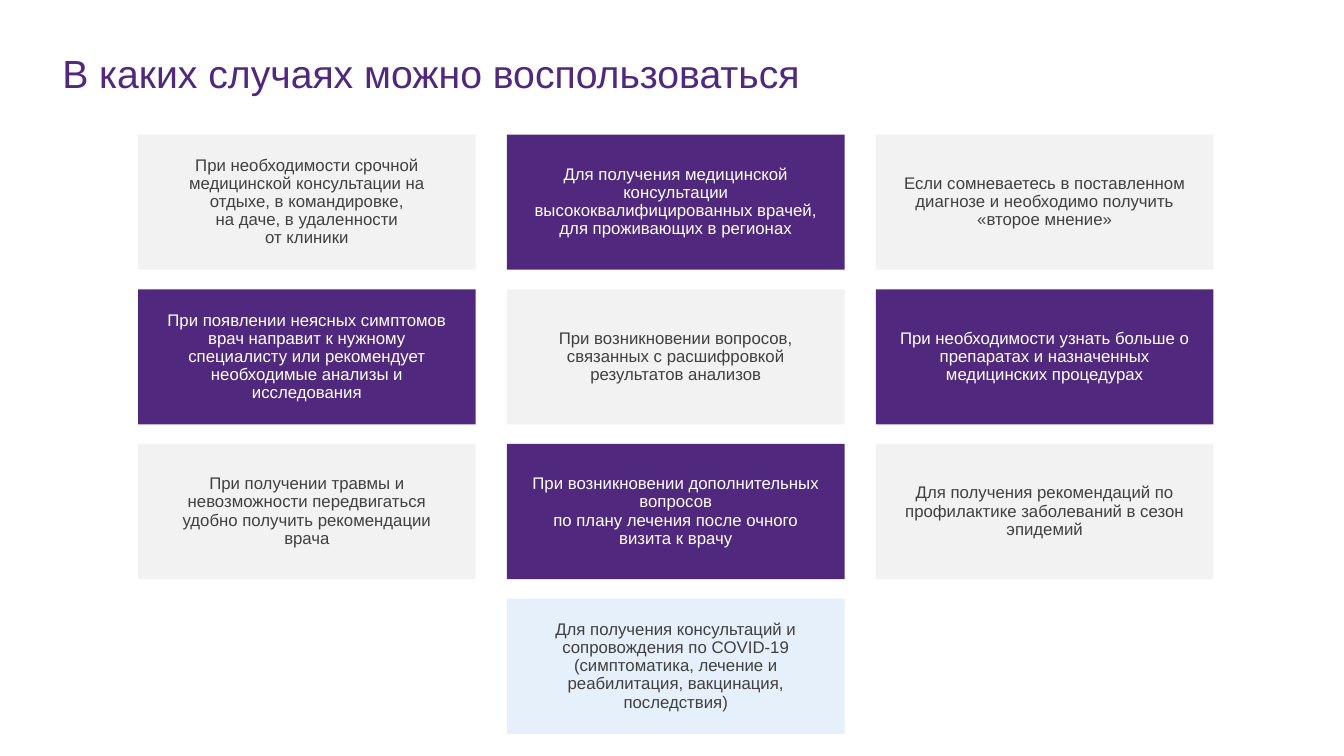
"""Builds a slide with a grid of cards listing when a remote medical consultation helps."""
from dataclasses import dataclass

from pptx import Presentation
from pptx.dml.color import RGBColor
from pptx.enum.shapes import MSO_SHAPE as SHAPE
from pptx.enum.text import MSO_ANCHOR as ANCHOR, PP_ALIGN as ALIGN
from pptx.util import Emu, Pt

PX = 4572


@dataclass(frozen=True)
class Theme:
    font: str = "Arial"
    purple: str = "50287D"
    grey: str = "F2F2F2"
    blue: str = "E6F0FA"
    dark: str = "404040"
    white: str = "FFFFFF"
    title_size: int = 28
    title_leading: int = 32
    card_size: int = 12
    card_spacing: float = 0.9


@dataclass(frozen=True)
class Grid:
    left: int = 274
    top: int = 267
    width: int = 670
    height: int = 268
    step_x: int = 732
    step_y: int = 307


@dataclass(frozen=True)
class Card:
    row: int
    col: int
    text: str
    fill: str
    color: str


THEME = Theme()
GRID = Grid()

REASONS = (
    "При необходимости срочной медицинской консультации на отдыхе, в командировке,\n"
    "на даче, в удаленности\nот клиники",
    "Для получения медицинской консультации высококвалифицированных врачей, "
    "для проживающих в регионах",
    "Если сомневаетесь в поставленном диагнозе и необходимо получить\n«второе мнение»",
    "При появлении неясных симптомов врач направит к нужному специалисту "
    "или рекомендует необходимые анализы и исследования",
    "При возникновении вопросов, связанных с расшифровкой результатов анализов",
    "При необходимости узнать больше о препаратах и назначенных медицинских процедурах",
    "При получении травмы и невозможности передвигаться удобно получить рекомендации врача",
    "При возникновении дополнительных вопросов\nпо плану лечения после очного визита к врачу",
    "Для получения рекомендаций по профилактике заболеваний в сезон эпидемий",
)
COVID = Card(
    3, 1,
    "Для получения консультаций и сопровождения по COVID-19 "
    "(симптоматика, лечение и реабилитация, вакцинация, последствия)",
    THEME.blue, THEME.dark,
)


def px(n: int) -> Emu:
    return Emu(n * PX)


def write(tf, text: str, *, size: int, color: str, align=ALIGN.LEFT,
          spacing=1.0, inset_x: int = 20, inset_y: int = 10) -> None:
    tf.word_wrap = True
    tf.vertical_anchor = ANCHOR.MIDDLE
    tf.margin_left = tf.margin_right = px(inset_x)
    tf.margin_top = tf.margin_bottom = px(inset_y)
    p = tf.paragraphs[0]
    p.text = text
    p.alignment = align
    p.line_spacing = spacing
    for r in p.runs:
        r.font.name = THEME.font
        r.font.size = Pt(size)
        r.font.color.rgb = RGBColor.from_string(color)


def reason_cards() -> list[Card]:
    cards = []
    for i, text in enumerate(REASONS):
        fill, color = (THEME.purple, THEME.white) if i % 2 else (THEME.grey, THEME.dark)
        cards.append(Card(*divmod(i, 3), text, fill, color))
    return cards


def draw_card(s, card: Card) -> None:
    sp = s.shapes.add_shape(
        SHAPE.RECTANGLE,
        px(GRID.left + card.col * GRID.step_x), px(GRID.top + card.row * GRID.step_y),
        px(GRID.width), px(GRID.height),
    )
    sp.shadow.inherit = False
    sp.fill.solid()
    sp.fill.fore_color.rgb = RGBColor.from_string(card.fill)
    sp.line.fill.background()
    write(sp.text_frame, card.text, size=THEME.card_size, color=card.color,
          align=ALIGN.CENTER, spacing=THEME.card_spacing, inset_x=40)


def main() -> None:
    prs = Presentation()
    prs.slide_width, prs.slide_height = px(2667), px(1500)
    s = prs.slides.add_slide(prs.slide_layouts[6])
    title = s.shapes.add_textbox(px(104), px(104), px(2320), px(84))
    write(title.text_frame, "В каких случаях можно воспользоваться",
          size=THEME.title_size, color=THEME.purple, spacing=Pt(THEME.title_leading))
    for card in [*reason_cards(), COVID]:
        draw_card(s, card)
    prs.save("out.pptx")


if __name__ == "__main__":
    main()
